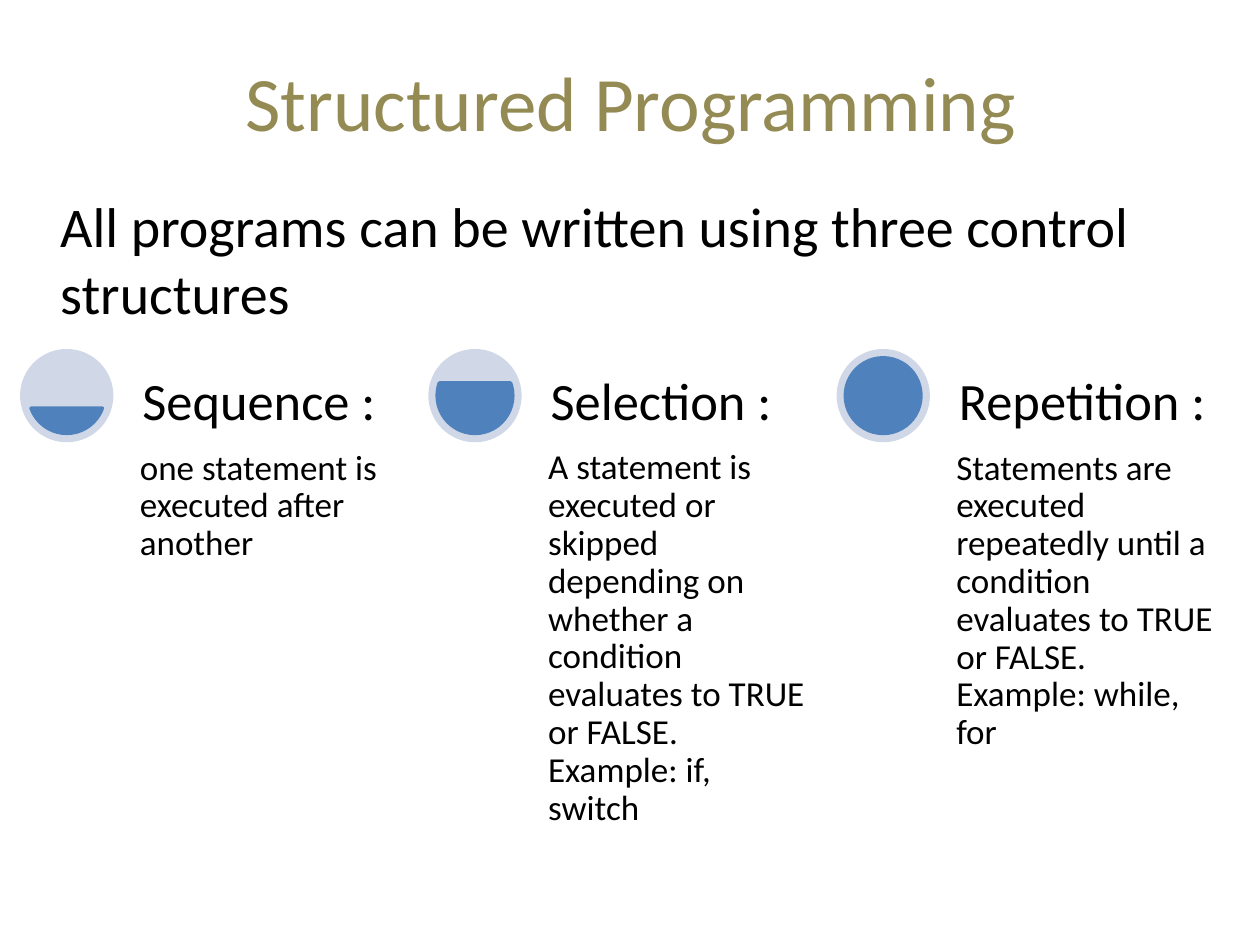
import pptx
import pptx.util
import pptx.dml.color
import pptx.enum.shapes
import pptx.enum.text
from dataclasses import dataclass

Inches = pptx.util.Inches
Pt = pptx.util.Pt
Shape = pptx.enum.shapes.MSO_SHAPE
Anchor = pptx.enum.text.MSO_ANCHOR
Align = pptx.enum.text.PP_ALIGN


@dataclass(frozen=True)
class Theme:
    font: str = "Calibri"
    gold: str = "948A54"
    black: str = "000000"
    pale: str = "D0D8E8"
    blue: str = "4F81BD"
    title: int = 44
    lead: int = 32
    head: int = 30
    body: int = 20


def color(code):
    return pptx.dml.color.RGBColor.from_string(code)


def apply(target, values):
    for name, value in values.items():
        setattr(target, name, value)


class Page:
    def __init__(self, slide, theme):
        self.slide = slide
        self.theme = theme

    def text(self, box, words, size, ink=None, inset=None, indent=0, frame=None, para=None):
        area = self.slide.shapes.add_textbox(*map(Inches, box)).text_frame
        area.word_wrap = True
        apply(area, frame or {})
        if inset is not None:
            sides = ("left", "top", "right", "bottom")
            apply(area, {f"margin_{side}": Inches(inset) for side in sides})
        line = area.paragraphs[0]
        apply(line, para or {})
        if indent:
            line._p.get_or_add_pPr().set("marL", str(Inches(indent)))
        run = line.add_run()
        run.text = words
        apply(run.font, {"name": self.theme.font, "size": Pt(size)})
        run.font.color.rgb = color(ink or self.theme.black)

    def shape(self, kind, box, fill, edge=None, angles=()):
        item = self.slide.shapes.add_shape(kind, *map(Inches, box))
        item.shadow.inherit = False
        item.fill.solid()
        item.fill.fore_color.rgb = color(fill)
        if edge:
            item.line.color.rgb = color(edge)
            item.line.width = Pt(2)
        else:
            item.line.fill.background()
        for index, angle in enumerate(angles):
            item.adjustments[index] = angle

    def column(self, left, head, body, angles):
        theme = self.theme
        top, size, gap, width = 2.77, 0.74, 0.07, 2.19
        inner = size - 2 * gap
        side = left + 0.89
        tight = {"line_spacing": 0.9}
        self.shape(Shape.OVAL, (left, top, size, size), theme.pale)
        self.shape(Shape.CHORD, (left + gap, top + gap, inner, inner),
                   theme.blue, theme.blue, angles)
        self.text((side, top + size, width, 3.12), body, theme.body,
                  inset=0.06, para=tight)
        self.text((side, top, width, size), head, theme.head, inset=0.08,
                  frame={"vertical_anchor": Anchor.BOTTOM}, para=tight)


COLUMNS = [
    ("Sequence :", "one statement is executed after another", (11.68, 96.32)),
    ("Selection :",
     "A statement is executed or skipped depending on whether a condition "
     "evaluates to TRUE or FALSE. Example: if, switch", (204.32, 119.68)),
    ("Repetition :",
     "Statements are executed repeatedly until a condition "
     "evaluates to TRUE or FALSE. Example: while, for", (162, 162)),
]


def main():
    deck = pptx.Presentation()
    apply(deck, {"slide_width": Inches(10), "slide_height": Inches(7.5)})
    theme = Theme()
    page = Page(deck.slides.add_slide(deck.slide_layouts[6]), theme)
    page.text((0.51, 0.17, 9, 1.25), "Structured Programming", theme.title,
              theme.gold, frame={"vertical_anchor": Anchor.MIDDLE},
              para={"alignment": Align.CENTER})
    page.text((0, 1.47, 10, 1.22),
              "All programs can be written using three control structures",
              theme.lead, indent=0.38, para={"space_before": Pt(6.4)})
    for index, (head, body, angles) in enumerate(COLUMNS):
        page.column(0.16 + 3.24 * index, head, body, angles)
    deck.save("out.pptx")


if __name__ == "__main__":
    main()
